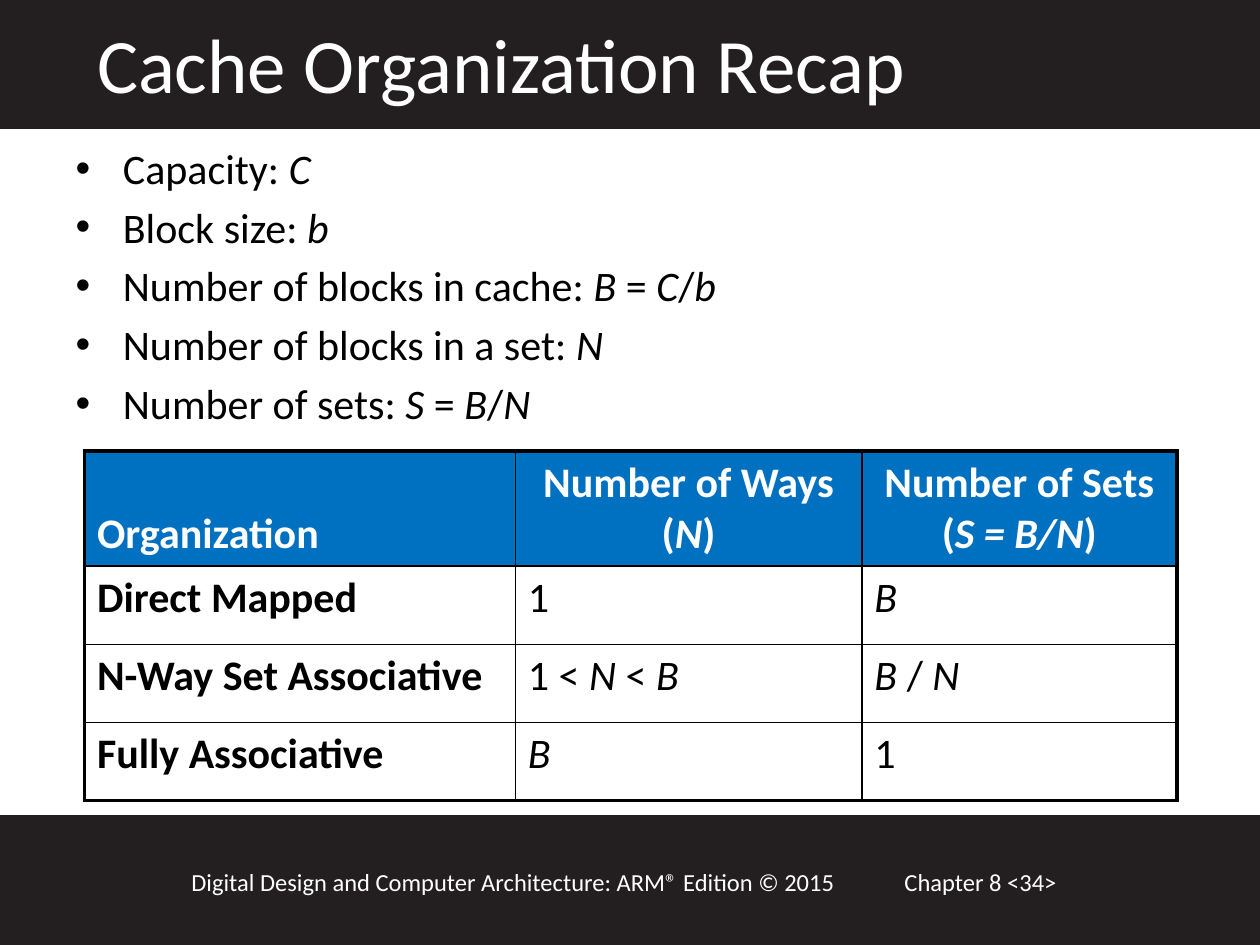
import pptx
import pptx.util
import pptx.dml.color
import pptx.enum.shapes
import pptx.enum.text
import pptx.oxml
import pptx.oxml.ns
from dataclasses import dataclass

Inches, Pt = pptx.util.Inches, pptx.util.Pt
PP_ALIGN = pptx.enum.text.PP_ALIGN
ANCHOR = pptx.enum.text.MSO_ANCHOR
rgb = pptx.dml.color.RGBColor.from_string


@dataclass(frozen=True)
class Theme:
    font: str = "Calibri"
    band: str = "231F20"
    header: str = "0070C0"
    light: str = "FFFFFF"
    dark: str = "000000"
    title_size: int = 44
    text_size: int = 24
    footer_size: int = 14
    outer_line: float = 2.25
    inner_line: float = 1


theme = Theme()


def write(paragraph, text, size, color, bold=False):
    """Add text run by run; parts between asterisks are italic."""
    for index, part in enumerate(text.split("*")):
        if part:
            run = paragraph.add_run()
            run.text = part
            run.font.name = theme.font
            run.font.size = Pt(size)
            run.font.color.rgb = rgb(color)
            run.font.bold = bold
            run.font.italic = index % 2 == 1


def add_border(cell, side, points):
    cell._tc.get_or_add_tcPr().append(pptx.oxml.parse_xml(
        f'<a:ln{side} {pptx.oxml.ns.nsdecls("a")} w="{Pt(points)}">'
        f'<a:solidFill><a:srgbClr val="{theme.dark}"/></a:solidFill></a:ln{side}>'))


deck = pptx.Presentation()
deck.slide_width, deck.slide_height = Inches(10), Inches(7.5)
slide = deck.slides.add_slide(deck.slide_layouts[1])
shapes = slide.shapes

# Dark bands, placed behind the placeholders
for top, height in [(0, 1.01), (6.48, 1.02)]:
    band = shapes.add_shape(pptx.enum.shapes.MSO_SHAPE.RECTANGLE,
                            Inches(0), Inches(top), Inches(10), Inches(height))
    band.shadow.inherit = False
    band.fill.solid()
    band.fill.fore_color.rgb = rgb(theme.band)
    band.line.color.rgb = rgb(theme.band)
    band.line.width = Pt(2)
    shapes._spTree.insert(2, band._element)

# Title
title = shapes.title
title.left, title.top = Inches(0.67), Inches(0.08)
title.width, title.height = Inches(8.67), Inches(0.84)
title.text_frame.auto_size = pptx.enum.text.MSO_AUTO_SIZE.NONE
heading = title.text_frame.paragraphs[0]
heading.alignment = PP_ALIGN.LEFT
write(heading, "Cache Organization Recap", theme.title_size, theme.light)

# Cache parameters
parameters = [
    "Capacity: *C*",
    "Block size: *b*",
    "Number of blocks in cache: *B* = *C*/*b*",
    "Number of blocks in a set: *N*",
    "Number of sets: *S* = *B*/*N*",
]
body = slide.placeholders[1]
body.left, body.top = Inches(0.5), Inches(1.08)
body.width, body.height = Inches(6.08), Inches(5.42)
body.text_frame.auto_size = pptx.enum.text.MSO_AUTO_SIZE.NONE
for index, parameter in enumerate(parameters):
    if index == 0:
        bullet = body.text_frame.paragraphs[0]
        bullet.space_before = Pt(0)
    else:
        bullet = body.text_frame.add_paragraph()
    write(bullet, parameter, theme.text_size, theme.dark)

# Organization table
organizations = [
    ["Organization", "Number of Ways (*N*)", "Number of Sets (*S = B/N*)"],
    ["Direct Mapped", "1", "*B*"],
    ["N-Way Set Associative", "1 < *N* < *B*", "*B* / *N*"],
    ["Fully Associative", "*B*", "1"],
]
column_widths = [3.42, 2.75, 2.5]
row_heights = [0.91, 0.62, 0.62, 0.62]
last_row, last_column = len(row_heights) - 1, len(column_widths) - 1
table = shapes.add_table(len(row_heights), len(column_widths), Inches(0.67), Inches(3.58),
                         Inches(sum(column_widths)), Inches(sum(row_heights))).table
for column, width in zip(table.columns, column_widths):
    column.width = Inches(width)
for row, height in zip(table.rows, row_heights):
    row.height = Inches(height)

for r, entries in enumerate(organizations):
    for c, entry in enumerate(entries):
        cell = table.cell(r, c)
        is_header = r == 0
        outer_sides = {"L": c == 0, "R": c == last_column, "T": is_header, "B": r == last_row}
        for side, is_outer in outer_sides.items():
            add_border(cell, side, theme.outer_line if is_outer else theme.inner_line)
        if is_header:
            cell.fill.solid()
            cell.fill.fore_color.rgb = rgb(theme.header)
        else:
            cell.fill.background()
        cell.vertical_anchor = ANCHOR.BOTTOM if is_header else ANCHOR.TOP
        line = cell.text_frame.paragraphs[0]
        line.alignment = PP_ALIGN.CENTER if is_header and c > 0 else PP_ALIGN.LEFT
        write(line, entry, theme.text_size, theme.light if is_header else theme.dark,
              bold=is_header or c == 0)

# Footer
footers = [
    (1.42, 5.75, "Digital Design and Computer Architecture: ARM® Edition © 2015"),
    (7.08, 2.17, "Chapter 8 <34>"),
]
for left, width, text in footers:
    footer = shapes.add_textbox(Inches(left), Inches(6.83), Inches(width), Inches(0.34))
    footer.text_frame.word_wrap = True
    write(footer.text_frame.paragraphs[0], text, theme.footer_size, theme.light)

deck.save("out.pptx")
